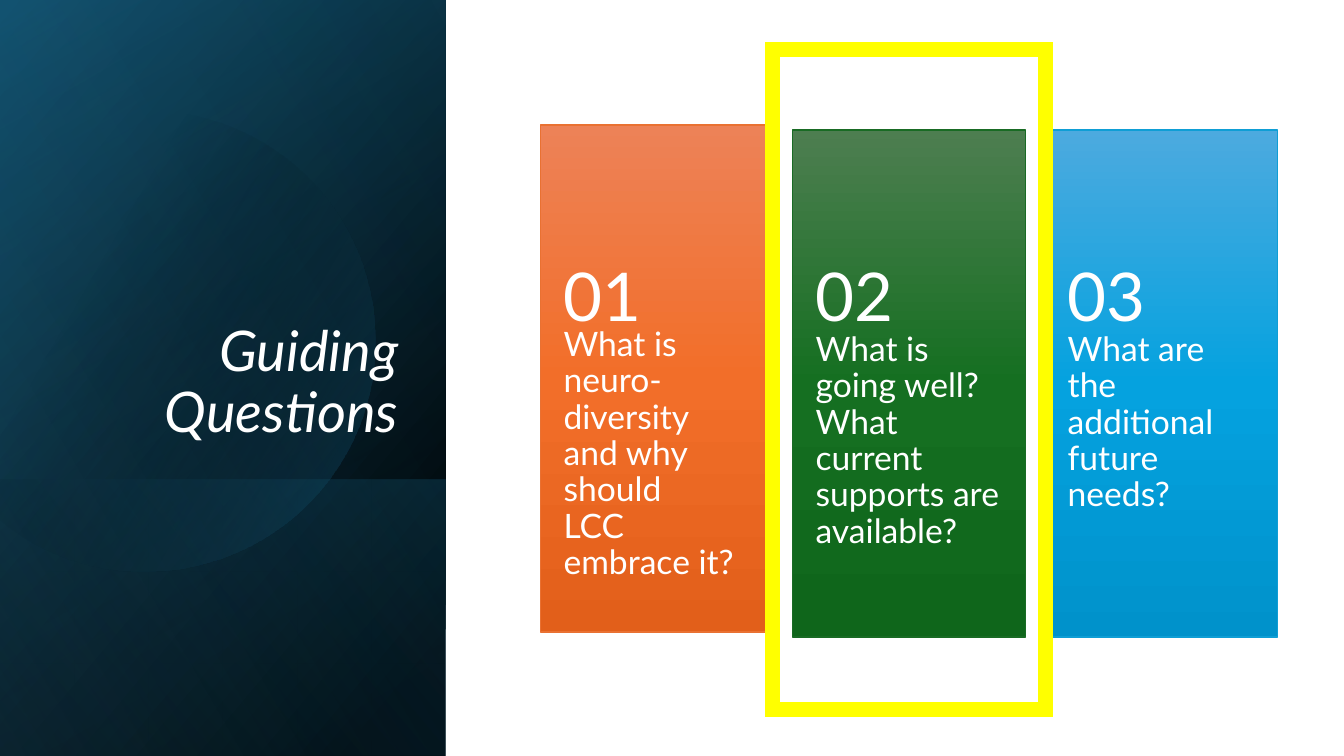
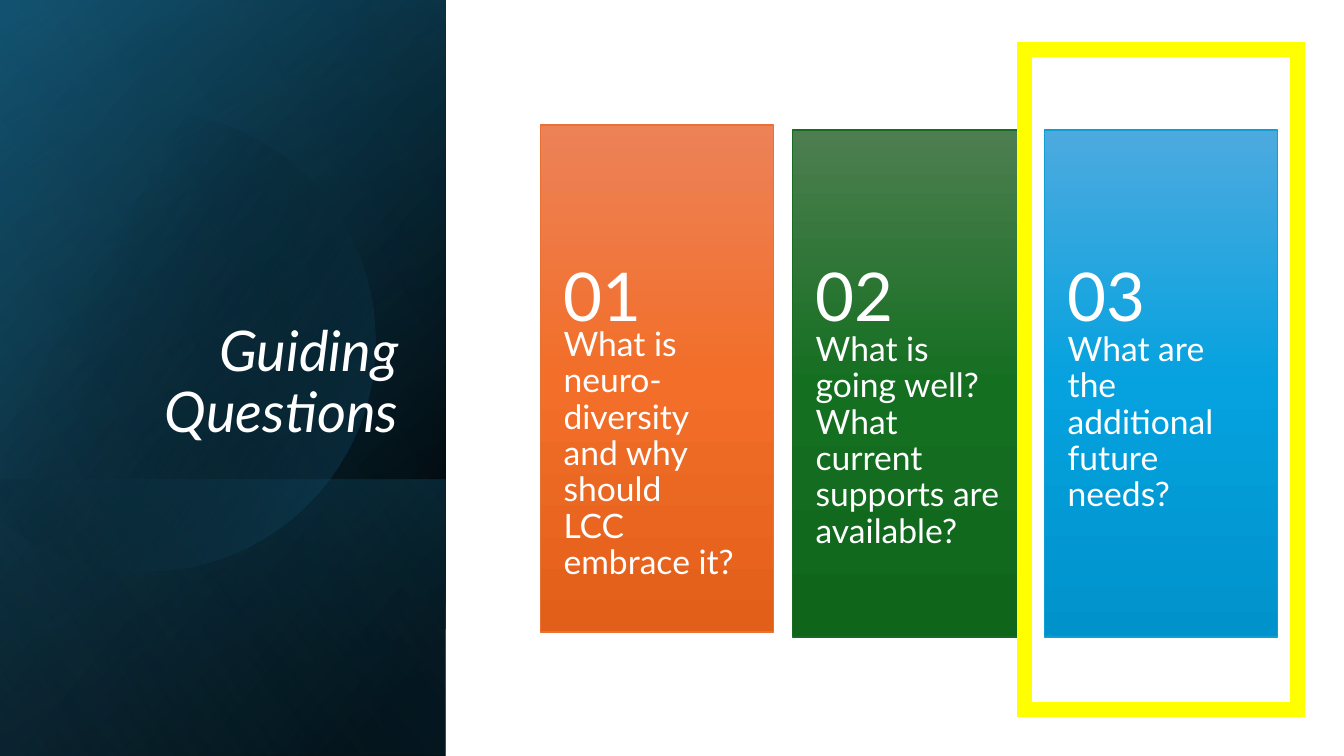
from lxml.etree import SubElement
from pptx import Presentation
from pptx.dml.color import RGBColor
from pptx.enum.shapes import MSO_SHAPE
from pptx.enum.text import MSO_ANCHOR, MSO_AUTO_SIZE, PP_ALIGN
from pptx.oxml import parse_xml
from pptx.oxml.ns import nsdecls, qn
from pptx.util import Inches, Pt

WIDTH, HEIGHT = 13.33, 7.5
PANEL = 4.42
FONT, WHITE, YELLOW = "Lato", "FFFFFF", "FFFF00"

# Card grid
FIRST_LEFT, COLUMN = 5.36, 2.5
CARD_WIDTH, CARD_HEIGHT = 2.31, 5.03
NUMBER_TOP, NUMBER_HEIGHT = 2.42, 1.11
QUESTION_DROP = 2.01
FRAME_MARGIN = 0.2

# Number, card top, gradient, outline, lines of the question
CARDS = [
    ("01", 1.24, ("ED8257", "F26E29", "E25F1A"), "E97132",
     ["What is neuro-diversity", "and why should", "LCC embrace it?"]),
    ("02", 1.29, ("4D7E50", "156F21", "0F661B"), "196B24",
     ["What is going well? What current supports are available?"]),
    ("03", 1.29, ("4CAADF", "05A2DF", "0092CB"), "0F9ED5",
     ["What are the additional future needs?"]),
]

# Height from the bottom edge, gradient angle, stops (position, colour, opacity)
PANEL_LAYERS = [
    (HEIGHT, 50, [(8, "000000", 100), (100, "104862", 100)]),
    (HEIGHT, 30, [(0, "000000", 0), (99, "156082", 46)]),
    (2.74, 130, [(2, "156082", 29), (100, "000000", 30)]),
    (HEIGHT, 120, [(0, "000000", 0), (99, "46B1E1", 11)]),
]

# Cubic curves around the disc, cut off by the slide's left edge
DISC_START = (0, 1.61)
DISC_CURVES = [
    ((0.23, 1.42), (0.5, 1.28), (0.8, 1.19)),
    ((1.03, 1.13), (1.26, 1.1), (1.49, 1.1)),
    ((2.46, 1.12), (3.35, 1.77), (3.63, 2.75)),
    ((3.98, 3.97), (3.28, 5.23), (2.07, 5.58)),
    ((1.31, 5.8), (0.53, 5.61), (0, 5.16)),
]
CURVE_STEPS = 24
UNITS_PER_INCH = 1000


def fill_gradient(shape, angle, stops):
    """Fill with (position, colour, opacity) stops in percent; drop the shadow."""
    shape.shadow.inherit = False
    shape.fill.background()
    stop_xml = "".join(
        f'<a:gs pos="{position * 1000}"><a:srgbClr val="{colour}">'
        f'<a:alpha val="{opacity * 1000}"/></a:srgbClr></a:gs>'
        for position, colour, opacity in stops)
    properties = shape.element.spPr
    properties.replace(properties.find(qn("a:noFill")), parse_xml(
        f'<a:gradFill {nsdecls("a")} rotWithShape="1"><a:gsLst>{stop_xml}</a:gsLst>'
        f'<a:lin ang="{angle * 60000}" scaled="0"/></a:gradFill>'))


def write(text_frame, lines, size, anchor, italic=False, align=PP_ALIGN.LEFT):
    text_frame.word_wrap = True
    text_frame.auto_size = MSO_AUTO_SIZE.NONE
    text_frame.vertical_anchor = anchor
    paragraph = text_frame.paragraphs[0]
    paragraph.alignment = align
    paragraph.line_spacing = 0.9
    for index, line in enumerate(lines):
        if index:
            paragraph.add_line_break()
        run = paragraph.add_run()
        run.text = line
        run.font.name = FONT
        run.font.size = Pt(size)
        run.font.italic = italic
        run.font.color.rgb = RGBColor.from_string(WHITE)


presentation = Presentation()
presentation.slide_width = Inches(WIDTH)
presentation.slide_height = Inches(HEIGHT)
layout = presentation.slide_layouts[5]
title = layout.placeholders[0]
title.left, title.top = Inches(0.64), Inches(1.84)
title.width, title.height = Inches(3.41), Inches(2.62)
slides = [presentation.slides.add_slide(layout) for _ in range(2)]

# Side panel: drawn once, then moved to the layout that both slides use
shapes = slides[0].shapes
panel = []
for height, angle, stops in PANEL_LAYERS:
    layer = shapes.add_shape(
        MSO_SHAPE.RECTANGLE,
        Inches((PANEL - height) / 2), Inches(HEIGHT - (height + PANEL) / 2),
        Inches(height), Inches(PANEL))
    layer.rotation = 90
    layer.element.spPr.find(qn("a:xfrm")).set("flipH", "1")
    layer.line.fill.background()
    fill_gradient(layer, angle, stops)
    panel.append(layer)

outline = [DISC_START]
for first, second, end in DISC_CURVES:
    start = outline[-1]
    for step in range(1, CURVE_STEPS + 1):
        t = step / CURVE_STEPS
        u = 1 - t
        outline.append(tuple(
            u**3 * a + 3 * u * u * t * b + 3 * u * t * t * c + t**3 * d
            for a, b, c, d in zip(start, first, second, end)))
points = [(x * UNITS_PER_INCH, y * UNITS_PER_INCH) for x, y in outline]
builder = shapes.build_freeform(*points[0], scale=Inches(1) / UNITS_PER_INCH)
builder.add_line_segments(points[1:], close=True)
disc = builder.convert_to_shape()
disc.line.fill.background()
fill_gradient(disc, 30, [(29, "000000", 0), (100, "156082", 43)])
panel.insert(3, disc)

for index, layer in enumerate(panel):
    layout.shapes.element.insert(2 + index, layer.element)

# Each slide frames the next card
for highlighted, slide in enumerate(slides, start=1):
    shapes = slide.shapes
    write(shapes.title.text_frame, ["Guiding Questions"], 40, MSO_ANCHOR.BOTTOM,
          italic=True, align=PP_ALIGN.RIGHT)

    for column, (number, top, colours, border, question) in enumerate(CARDS):
        left = FIRST_LEFT + column * COLUMN
        card = shapes.add_shape(MSO_SHAPE.RECTANGLE, Inches(left), Inches(top),
                                Inches(CARD_WIDTH), Inches(CARD_HEIGHT))
        fill_gradient(card, 90, [(50 * i, colour, 100) for i, colour in enumerate(colours)])
        card.line.color.rgb = RGBColor.from_string(border)
        card.line.width = Pt(1)

        question_top = top + QUESTION_DROP
        for lines, size, box_top, height, anchor, inset_top, inset_bottom in [
            (question, 24, question_top, CARD_HEIGHT - QUESTION_DROP,
             MSO_ANCHOR.TOP, 0, 0.36),
            ([number], 48, NUMBER_TOP, NUMBER_HEIGHT, MSO_ANCHOR.MIDDLE, 0.18, 0.18),
        ]:
            box = shapes.add_textbox(Inches(left), Inches(box_top),
                                     Inches(CARD_WIDTH), Inches(height))
            text_frame = box.text_frame
            text_frame.margin_left = text_frame.margin_right = Inches(0.23)
            text_frame.margin_top = Inches(inset_top)
            text_frame.margin_bottom = Inches(inset_bottom)
            write(text_frame, lines, size, anchor)

    frame = shapes.add_shape(
        MSO_SHAPE.RECTANGLE,
        Inches(FIRST_LEFT + highlighted * COLUMN - FRAME_MARGIN), Inches(0.49),
        Inches(CARD_WIDTH + 2 * FRAME_MARGIN), Inches(6.55))
    frame.shadow.inherit = False
    frame.fill.background()
    frame.line.color.rgb = RGBColor.from_string(YELLOW)
    frame.line.width = Pt(11)
    SubElement(frame.element.spPr.find(qn("a:ln")), qn("a:miter"), lim="800000")

presentation.save("out.pptx")
